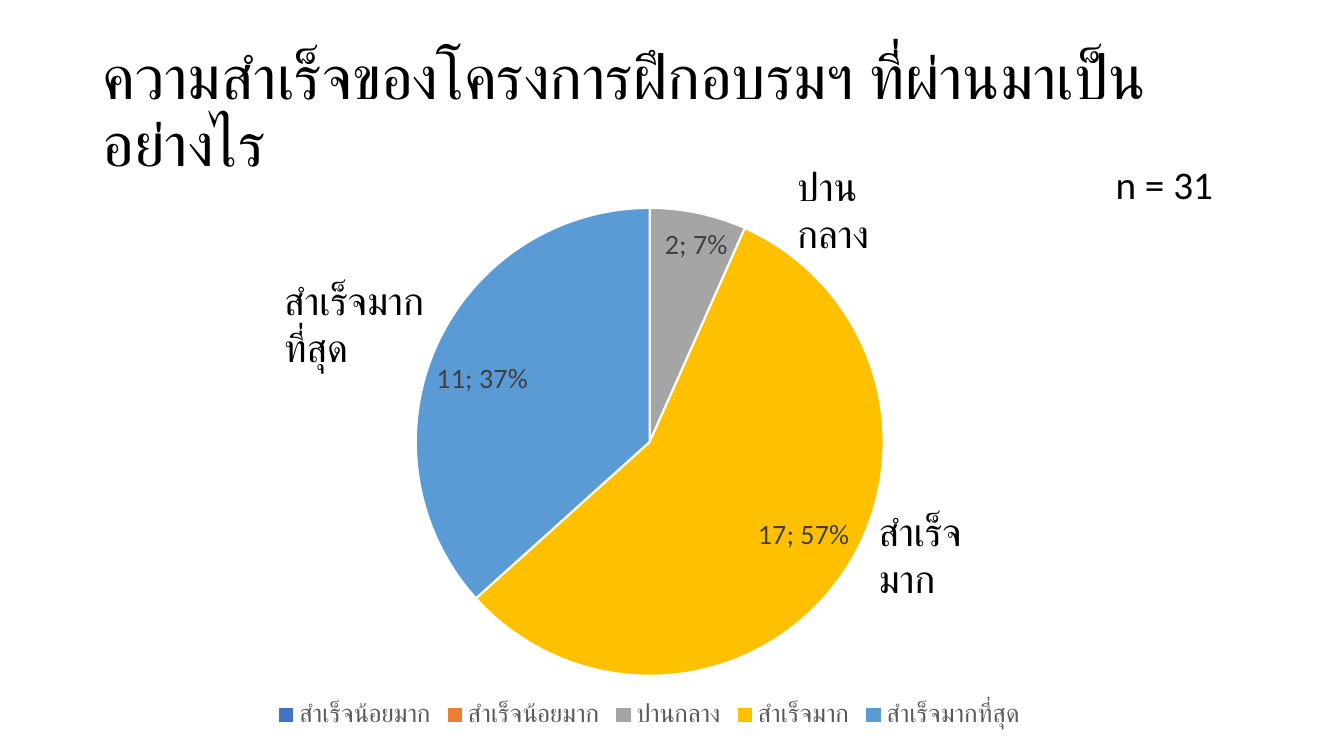
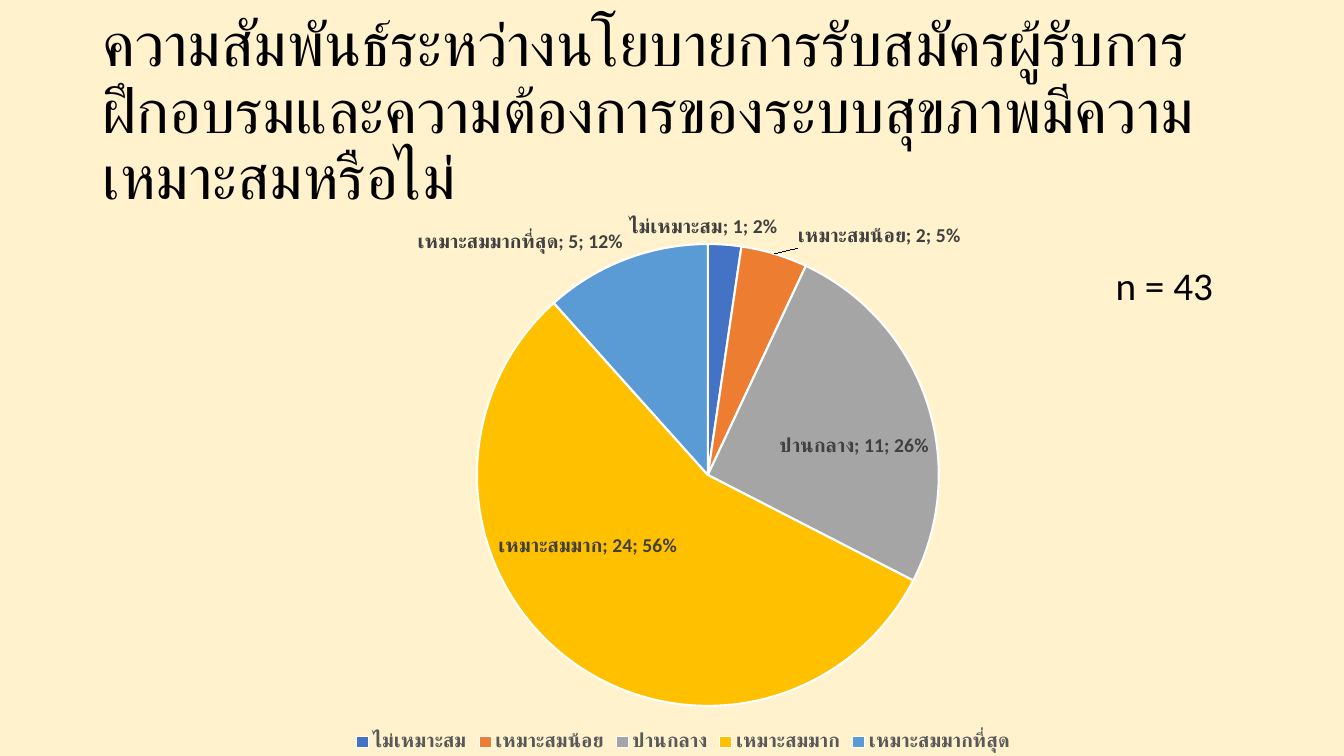
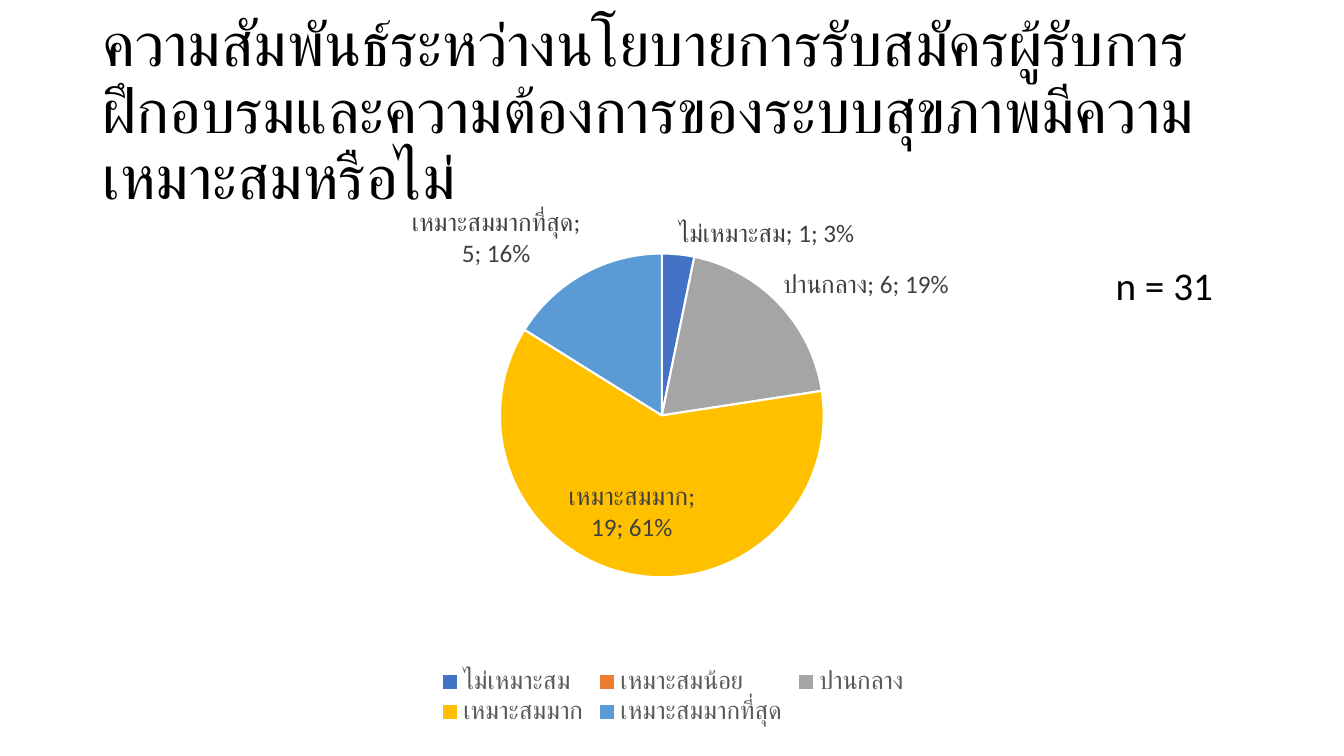
from copy import deepcopy
from dataclasses import dataclass, field

from pptx import Presentation
from pptx.chart.data import CategoryChartData
from pptx.dml.color import RGBColor
from pptx.enum.chart import XL_CHART_TYPE, XL_LABEL_POSITION, XL_LEGEND_POSITION
from pptx.enum.text import MSO_ANCHOR, MSO_AUTO_SIZE, PP_ALIGN
from pptx.oxml import parse_xml
from pptx.oxml.ns import nsdecls, qn
from pptx.util import Cm, Pt

BLACK, WHITE, CREAM = "000000", "FFFFFF", "FFF2CC"
GREY, DARK = "595959", "404040"
SLICES = ["4472C4", "ED7D31", "A5A5A5", "FFC000", "5B9BD5"]
FACE = "Calibri"
FIT = ["ไม่เหมาะสม", "เหมาะสมน้อย", "ปานกลาง", "เหมาะสมมาก", "เหมาะสมมากที่สุด"]
SUCCESS = ["สำเร็จน้อยมาก", "สำเร็จน้อยมาก", "ปานกลาง", "สำเร็จมาก", "สำเร็จมากที่สุด"]
POLICY = (
    "ความสัมพันธ์ระหว่างนโยบายการรับสมัครผู้รับการฝึกอบรม"
    "และความต้องการของระบบสุขภาพมีความเหมาะสมหรือไม่"
)


@dataclass
class Box:
    left: float
    top: float
    width: float
    height: float

    def lengths(self) -> list:
        return [Cm(n) for n in (self.left, self.top, self.width, self.height)]


@dataclass
class Note:
    text: str
    box: Box
    face: str = FACE
    align: PP_ALIGN = PP_ALIGN.LEFT


@dataclass
class Pie:
    names: list
    counts: list
    frame: Box
    disc: Box
    size: int
    key: int
    bold: bool = False
    named: bool = True
    shifts: dict = field(default_factory=dict)


@dataclass
class Page:
    title: str
    pie: Pie
    notes: list
    back: str = WHITE


def color(code: str) -> RGBColor:
    return RGBColor.from_string(code)


def style(font, size: float, code: str, face: str = FACE, bold: bool = False) -> None:
    font.size, font.name, font.bold = Pt(size), face, bold
    font.color.rgb = color(code)


def add_run(para, text: str, size: float, face: str = FACE) -> None:
    run = para.add_run()
    run.text = text
    style(run.font, size, BLACK, face)


def add_title(slide, text: str) -> None:
    title = slide.shapes.title
    title.left, title.top, title.width, title.height = Box(2.33, 1.01, 29.21, 3.68).lengths()
    frame = title.text_frame
    frame.auto_size = MSO_AUTO_SIZE.NONE
    frame.vertical_anchor = MSO_ANCHOR.MIDDLE
    frame.word_wrap = True
    para = frame.paragraphs[0]
    para.alignment = PP_ALIGN.LEFT
    para.line_spacing = 0.9
    add_run(para, text, 44)


def add_note(slide, note: Note) -> None:
    frame = slide.shapes.add_textbox(*note.box.lengths()).text_frame
    frame.word_wrap = True
    para = frame.paragraphs[0]
    para.alignment = note.align
    add_run(para, note.text, 28, note.face)


def place_disc(chart, pie: Pie) -> None:
    frame, disc = pie.frame, pie.disc
    parts = {
        "x": (disc.left - frame.left) / frame.width,
        "y": (disc.top - frame.top) / frame.height,
        "w": disc.width / frame.width,
        "h": disc.height / frame.height,
    }
    sizes = "".join(f'<c:{tag} val="{part:.4f}"/>' for tag, part in parts.items())
    area = chart.element.find(qn("c:chart")).find(qn("c:plotArea"))
    for old in area.findall(qn("c:layout")):
        area.remove(old)
    area.insert(0, parse_xml(
        f'<c:layout {nsdecls("c")}><c:manualLayout><c:layoutTarget val="inner"/>'
        f'<c:xMode val="edge"/><c:yMode val="edge"/>{sizes}</c:manualLayout></c:layout>'
    ))


def clear_back(chart) -> None:
    chart.element.find(qn("c:chart")).addnext(parse_xml(
        f'<c:spPr {nsdecls("c", "a")}><a:noFill/><a:ln><a:noFill/></a:ln></c:spPr>'
    ))


def add_labels(series, pie: Pie) -> None:
    labels = series.data_labels
    style(labels.font, pie.size, DARK, bold=pie.bold)
    labels.show_value = labels.show_percentage = True
    labels.show_category_name = pie.named
    labels.position = XL_LABEL_POSITION.BEST_FIT
    root = series.data_labels._element
    shared = [item for item in root if item.tag != qn("c:showLeaderLines")]
    spot = 0
    for index, count in enumerate(pie.counts):
        if count and index not in pie.shifts:
            continue
        body = '<c:delete val="1"/>'
        if count:
            body = (f'<c:layout><c:manualLayout><c:x val="{pie.shifts[index]}"/>'
                    '<c:y val="0"/></c:manualLayout></c:layout>')
        label = parse_xml(f'<c:dLbl {nsdecls("c")}><c:idx val="{index}"/>{body}</c:dLbl>')
        if count:
            label.extend(deepcopy(item) for item in shared)
        root.insert(spot, label)
        spot += 1


def add_pie(slide, pie: Pie) -> None:
    data = CategoryChartData()
    data.categories = pie.names
    data.add_series("Series 1", pie.counts)
    chart = slide.shapes.add_chart(XL_CHART_TYPE.PIE, *pie.frame.lengths(), data).chart
    chart.has_title = False
    style(chart.font, pie.size, BLACK, bold=pie.bold)
    chart.has_legend = True
    legend = chart.legend
    legend.position = XL_LEGEND_POSITION.BOTTOM
    legend.include_in_layout = False
    style(legend.font, pie.key, GREY, bold=pie.bold)
    plot = chart.plots[0]
    plot.vary_by_categories = True
    series = plot.series[0]
    for index, code in enumerate(SLICES):
        form = series.points[index].format
        form.fill.solid()
        form.fill.fore_color.rgb = color(code)
        form.line.color.rgb = color(WHITE)
        form.line.width = Pt(1.5)
    add_labels(series, pie)
    place_disc(chart, pie)
    clear_back(chart)


def add_page(deck, page: Page) -> None:
    slide = deck.slides.add_slide(deck.slide_layouts[5])
    fill = slide.background.fill
    fill.solid()
    fill.fore_color.rgb = color(page.back)
    add_title(slide, page.title)
    add_pie(slide, page.pie)
    for note in page.notes:
        add_note(slide, note)


def total(count: int, top: float) -> Note:
    return Note(f"n = {count}", Box(25.96, top, 6.76, 1.45), align=PP_ALIGN.CENTER)


PAGES = [
    Page(
        "ความสำเร็จของโครงการฝึกอบรมฯ ที่ผ่านมาเป็นอย่างไร",
        Pie(SUCCESS, [0, 0, 2, 17, 11], Box(4.34, 3.91, 24.05, 14.55),
            Box(10.48, 5.24, 11.79, 11.79), 20, 18, named=False),
        [
            Note("สำเร็จมากที่สุด", Box(6.91, 6.83, 4.75, 1.45), "Arial"),
            Note("ปานกลาง", Box(19.84, 3.96, 3.38, 1.45)),
            Note("สำเร็จมาก", Box(21.89, 12.65, 3.51, 1.45), "Arial"),
            total(31, 3.91),
        ],
    ),
    Page(
        POLICY,
        Pie(FIT, [1, 2, 11, 24, 5], Box(3.53, 5.08, 27.38, 13.97),
            Box(12.02, 6.15, 11.64, 11.64), 14, 14, bold=True,
            shifts={0: -0.02, 1: 0.02}),
        [total(43, 6.45)],
        CREAM,
    ),
    Page(
        POLICY,
        Pie(FIT, [1, 0, 6, 19, 5], Box(4.9, 4.7, 24.13, 13.69),
            Box(12.6, 6.39, 8.16, 8.16), 18, 18),
        [total(31, 6.45)],
    ),
]


def main() -> None:
    deck = Presentation()
    deck.slide_width, deck.slide_height = Cm(33.87), Cm(19.05)
    for page in PAGES:
        add_page(deck, page)
    deck.save("out.pptx")


if __name__ == "__main__":
    main()
